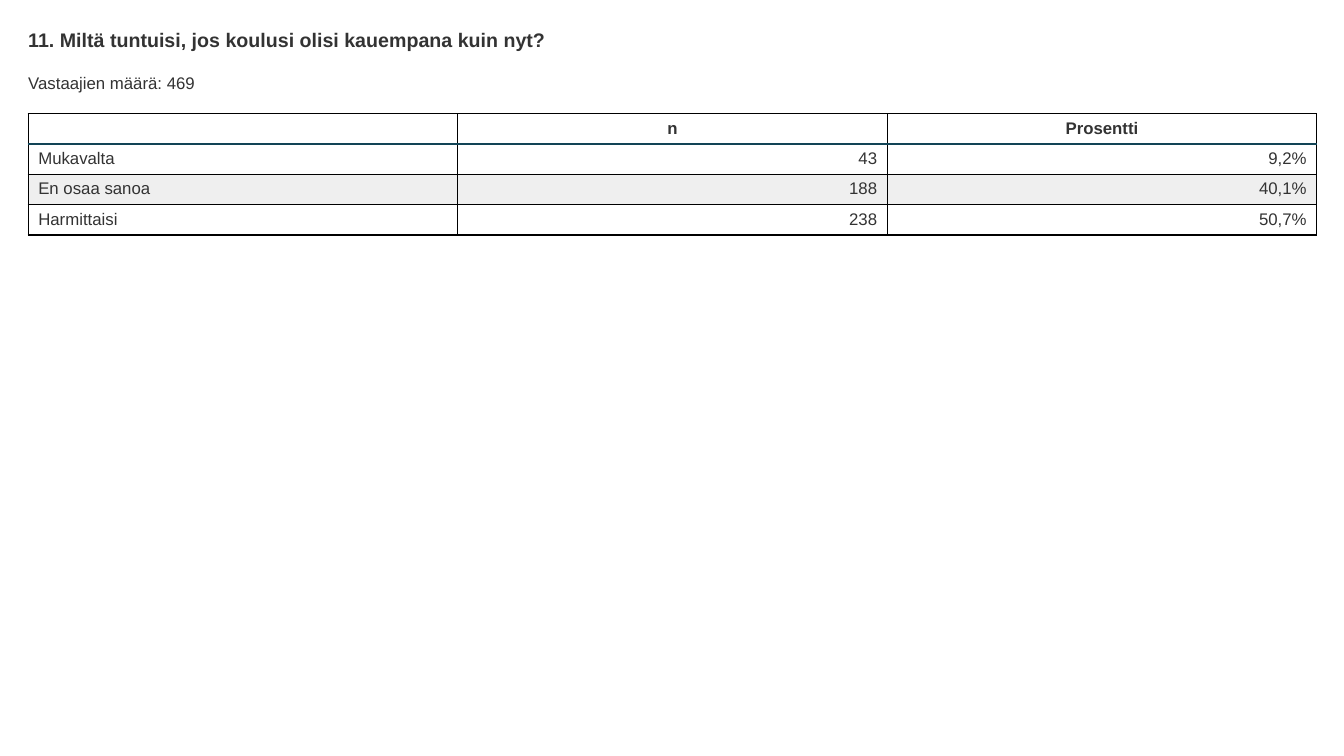
"""Builds a survey slide with one question and its table of answers."""
import pptx
import pptx.dml.color
import pptx.enum.text
import pptx.oxml
import pptx.oxml.xmlchemy
import pptx.util

Inches = pptx.util.Inches
Pt = pptx.util.Pt
Align = pptx.enum.text.PP_ALIGN

COLORS = {"text": "333333", "grid": "000000", "rule": "124456", "band": "EFEFEF"}
LEFT, WIDTH, ROW_HEIGHT = 0.28, 12.78, 0.3
ANSWERS = [
    ("", "n", "Prosentti"),
    ("Mukavalta", "43", "9,2%"),
    ("En osaa sanoa", "188", "40,1%"),
    ("Harmittaisi", "238", "50,7%"),
]


class SurveySlide:
    """Holds the text style and the slide being filled."""

    def __init__(self, deck):
        self.font_name = "Arial"
        self.slide = deck.slides.add_slide(deck.slide_layouts[5])

    def add_text(self, paragraph, text, size=12, bold=False, align=Align.LEFT):
        paragraph.alignment = align
        if not text:
            end = pptx.oxml.xmlchemy.OxmlElement("a:endParaRPr")
            end.set("sz", str(size * 100))
            paragraph._p.append(end)
            return
        run = paragraph.add_run()
        run.text = text
        style = {"name": self.font_name, "size": Pt(size), "bold": bold}
        for attribute, value in style.items():
            setattr(run.font, attribute, value)
        run.font.color.rgb = pptx.dml.color.RGBColor.from_string(COLORS["text"])

    def place_line(self, holder, text, top, height, **style):
        box = {"left": LEFT, "top": top, "width": WIDTH, "height": height}
        for attribute, value in box.items():
            setattr(holder, attribute, Inches(value))
        frame_format = {
            "margin_left": 0, "margin_right": 0, "margin_top": 0, "margin_bottom": 0,
            "word_wrap": True,
            "vertical_anchor": pptx.enum.text.MSO_ANCHOR.TOP,
            "auto_size": pptx.enum.text.MSO_AUTO_SIZE.SHAPE_TO_FIT_TEXT,
        }
        for attribute, value in frame_format.items():
            setattr(holder.text_frame, attribute, value)
        self.add_text(holder.text_frame.paragraphs[0], text, **style)

    def title(self, text, top, height):
        self.place_line(self.slide.shapes.title, text, top, height, size=14, bold=True)

    def caption(self, text, top, height):
        self.place_line(self.slide.shapes.add_textbox(0, 0, 0, 0), text, top, height)

    def border(self, cell, side, color, points):
        line = pptx.oxml.parse_xml(
            f'<a:{side} xmlns:a="http://schemas.openxmlformats.org/drawingml/2006/main" '
            f'w="{Pt(points)}"><a:solidFill><a:srgbClr val="{COLORS[color]}"/>'
            f'</a:solidFill></a:{side}>')
        cell._tc.get_or_add_tcPr().append(line)

    def answer_table(self, rows, top):
        table = self.slide.shapes.add_table(
            len(rows), len(rows[0]), Inches(LEFT), Inches(top),
            Inches(WIDTH), Inches(ROW_HEIGHT * len(rows))).table
        table.first_row = table.horz_banding = False
        for row_index, row in enumerate(rows):
            for column_index, text in enumerate(row):
                cell = table.cell(row_index, column_index)
                header = row_index == 0
                align = Align.CENTER if header else Align.RIGHT if column_index else Align.LEFT
                self.add_text(cell.text_frame.paragraphs[0], text, bold=header, align=align)
                ruled = {0: "lnB", 1: "lnT"}.get(row_index)
                for side in ("lnL", "lnR", "lnT", "lnB"):
                    color, points = ("rule", 2) if side == ruled else ("grid", 1)
                    self.border(cell, side, color, points)
                if row_index and row_index % 2 == 0:
                    cell.fill.solid()
                    cell.fill.fore_color.rgb = pptx.dml.color.RGBColor.from_string(COLORS["band"])
                else:
                    cell.fill.background()


def main():
    deck = pptx.Presentation()
    deck.slide_width, deck.slide_height = Inches(13.33), Inches(7.5)
    survey = SurveySlide(deck)
    survey.title("11. Miltä tuntuisi, jos koulusi olisi kauempana kuin nyt?", 0.28, 0.23)
    survey.caption("Vastaajien määrä: 469", 0.72, 0.2)
    survey.answer_table(ANSWERS, 1.13)
    deck.save("out.pptx")


if __name__ == "__main__":
    main()
